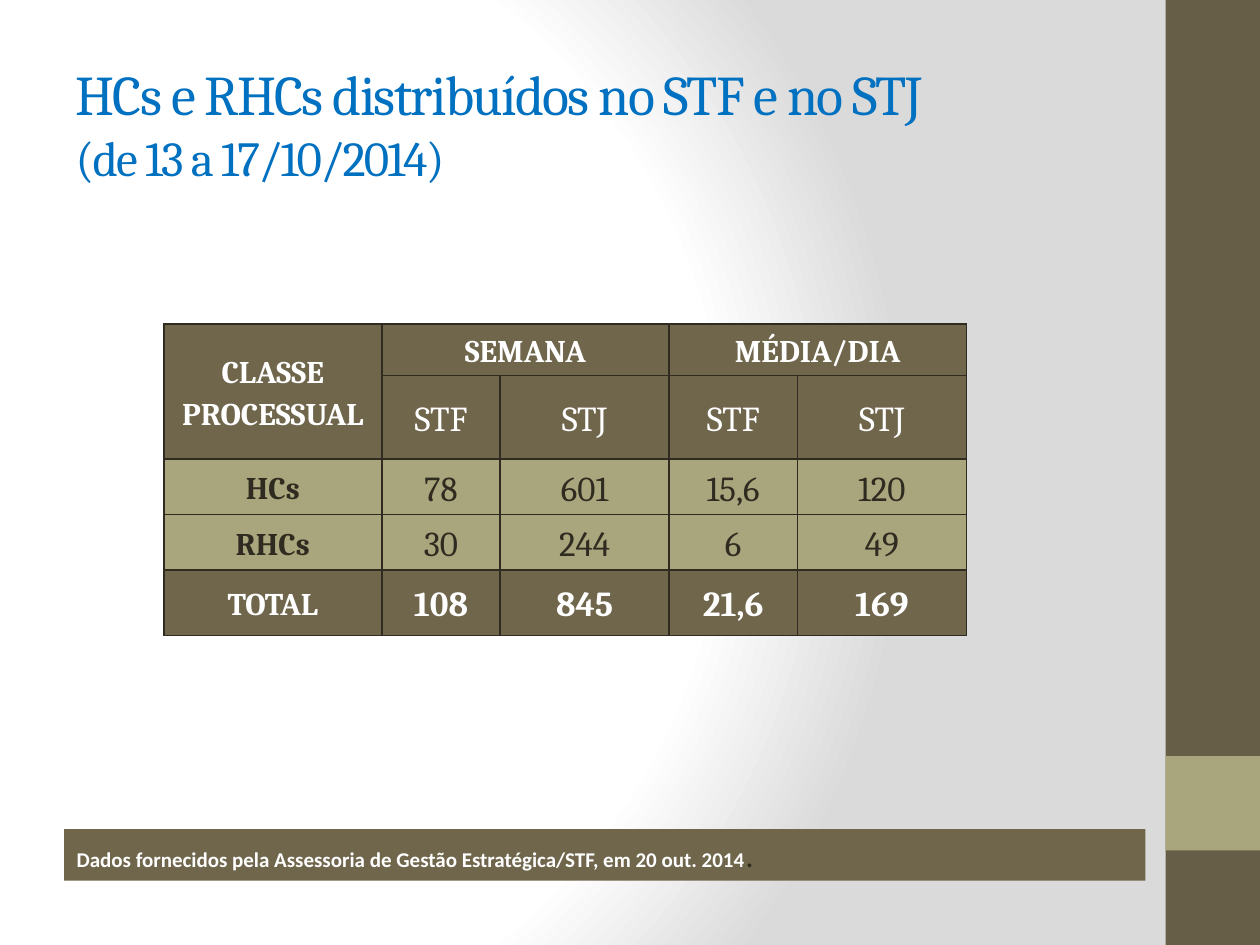
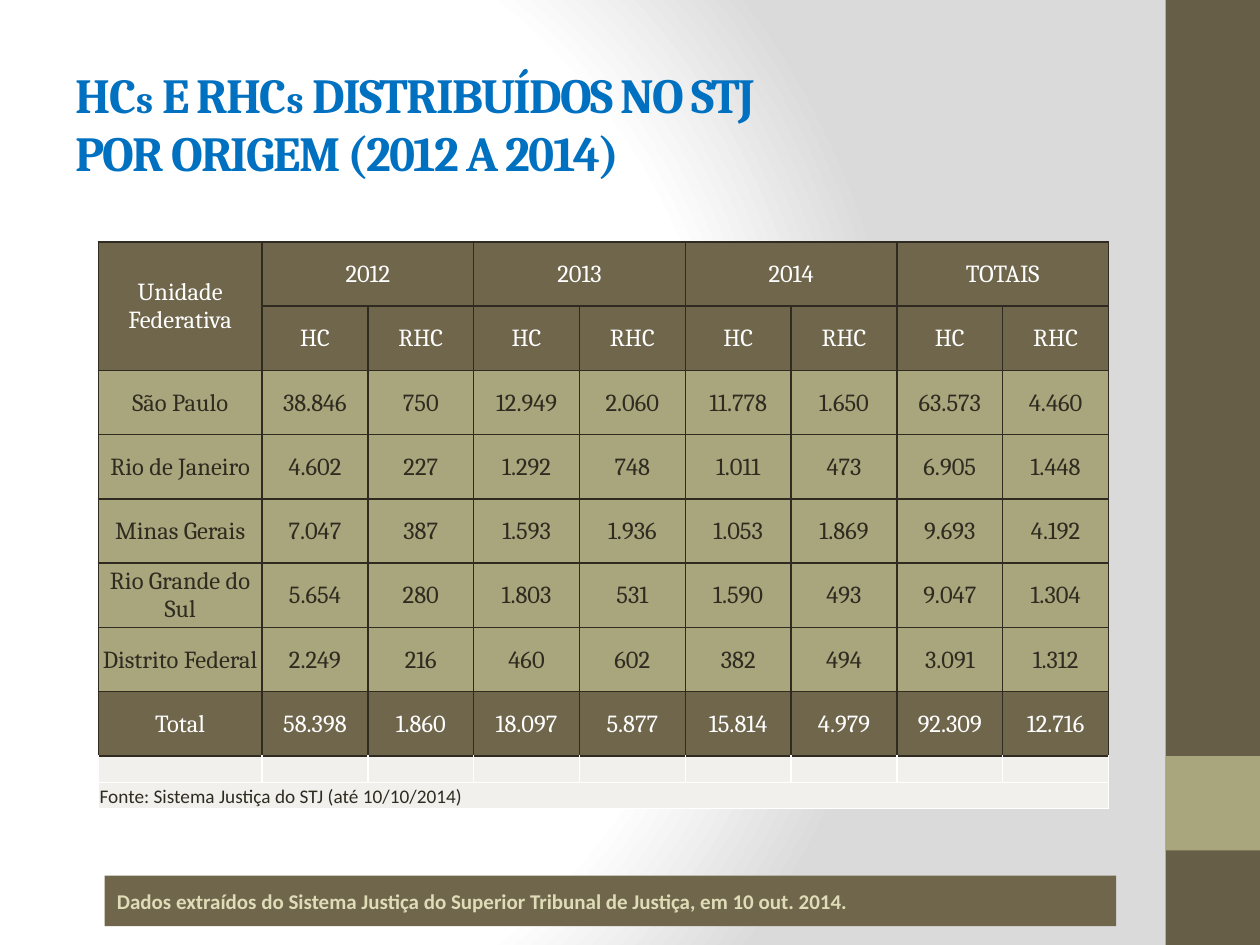
from lxml import etree
from pptx import Presentation
from pptx.dml.color import RGBColor
from pptx.enum.shapes import MSO_SHAPE
from pptx.enum.text import MSO_ANCHOR, MSO_AUTO_SIZE, PP_ALIGN
from pptx.oxml import parse_xml
from pptx.oxml.ns import qn
from pptx.util import Inches, Pt

# Shared look
BLUE = RGBColor(0x00, 0x70, 0xC0)
INK = RGBColor(0x2F, 0x2B, 0x20)
WHITE = RGBColor(0xFF, 0xFF, 0xFF)
BAND = RGBColor(0x67, 0x5E, 0x47)
DARK = RGBColor(0x6F, 0x66, 0x4C)
LIGHT = RGBColor(0xA9, 0xA5, 0x7C)
PALE = RGBColor(0xF1, 0xF0, 0xEC)
CREAM = RGBColor(0xDF, 0xDC, 0xB7)
SERIF, SANS = "Cambria", "Calibri"
TITLE_BOX = (0.5, 0.3, 8.33, 1.25)
BANDS = [((9.25, 0, 0.75, 7.5), BAND), ((9.25, 6, 0.75, 0.75), LIGHT)]
BACKGROUND = """
<p:bg xmlns:p="http://schemas.openxmlformats.org/presentationml/2006/main"
      xmlns:a="http://schemas.openxmlformats.org/drawingml/2006/main">
  <p:bgPr><a:gradFill rotWithShape="1">
    <a:gsLst>
      <a:gs pos="0"><a:srgbClr val="FFFFFF"/></a:gs>
      <a:gs pos="75000"><a:srgbClr val="FFFFFF"/></a:gs>
      <a:gs pos="100000"><a:srgbClr val="DADADA"/></a:gs>
    </a:gsLst>
    <a:path path="circle"><a:fillToRect l="20000" t="50000" r="100000" b="50000"/></a:path>
  </a:gradFill><a:effectLst/></p:bgPr>
</p:bg>"""

# Content: title lines and footers are runs of (text, size, ...)
WEEK = {
    "title": [[("HCs e RHCs distribuídos no STF e no STJ", 32)],
              [("(de 13 a 17/10/2014)", 28)]],
    "title_bold": False,
    "corner": "CLASSE PROCESSUAL",
    "groups": ["SEMANA", "MÉDIA/DIA"],
    "courts": ["STF", "STJ"],
    "rows": [
        ["HCs", "78", "601", "15,6", "120"],
        ["RHCs", "30", "244", "6", "49"],
        ["TOTAL", "108", "845", "21,6", "169"],
    ],
    "at": (1.3, 2.57),
    "widths": [1.73, 0.94, 1.34, 1.02, 1.34],
    "heights": [0.41, 0.66, 0.44, 0.44, 0.52],
    "margins": (0.07, 0, 0.07, 0),
    "line_spacing": 1.15,
    "label_size": 18, "value_size": 20, "bold_labels": True,
    "source": None,
    "footer": [("Dados fornecidos pela Assessoria de Gestão Estratégica/STF, "
                "em 20 out. 2014", 12, WHITE, True), (".", 18, INK, False)],
    "footer_box": (0.51, 6.58, 8.58, 0.41),
}
ORIGIN = {
    "title": [[("HC", 28), ("s", 22), (" E RHC", 28), ("s", 22),
               (" DISTRIBUÍDOS NO STJ", 28)],
              [("POR ORIGEM (2012 A 2014)", 28)]],
    "title_bold": True,
    "corner": "Unidade Federativa",
    "groups": ["2012", "2013", "2014", "TOTAIS"],
    "courts": ["HC", "RHC"],
    "rows": [
        ["São Paulo", "38.846", "750", "12.949", "2.060", "11.778", "1.650", "63.573", "4.460"],
        ["Rio de Janeiro", "4.602", "227", "1.292", "748", "1.011", "473", "6.905", "1.448"],
        ["Minas Gerais", "7.047", "387", "1.593", "1.936", "1.053", "1.869", "9.693", "4.192"],
        ["Rio Grande do Sul", "5.654", "280", "1.803", "531", "1.590", "493", "9.047", "1.304"],
        ["Distrito Federal", "2.249", "216", "460", "602", "382", "494", "3.091", "1.312"],
        ["Total", "58.398", "1.860", "18.097", "5.877", "15.814", "4.979", "92.309", "12.716"],
    ],
    "at": (0.78, 1.92),
    "widths": [1.3] + [0.84] * 8,
    "heights": [0.51] * 8 + [0.21] * 2,
    "margins": (0.01, 0.01, 0.01, 0),
    "line_spacing": 1.0,
    "label_size": 14, "value_size": 14, "bold_labels": False,
    "source": "Fonte: Sistema Justiça do STJ (até 10/10/2014)",
    "footer": [("Dados extraídos do Sistema Justiça do Superior Tribunal de Justiça, "
                "em 10 out. 2014.", 12, CREAM, True)],
    "footer_box": (0.83, 6.95, 8.03, 0.4),
}


def add_bar(slide, box, color):
    bar = slide.shapes.add_shape(MSO_SHAPE.RECTANGLE, *map(Inches, box))
    bar.shadow.inherit = False
    bar.fill.solid()
    bar.fill.fore_color.rgb = color
    bar.line.fill.background()
    return bar


def style(font, face, color, size=None, bold=False):
    font.name, font.bold = face, bold
    font.color.rgb = color
    if size:
        font.size = Pt(size)


def dress_master(master, slide):
    """Put the background and the side bands on the master, behind the rest."""
    page = master.element.cSld
    old = page.find(qn("p:bg"))
    if old is not None:
        page.remove(old)
    page.insert(0, parse_xml(BACKGROUND))
    for place, (box, color) in enumerate(BANDS, start=2):
        master.shapes.element.insert(place, add_bar(slide, box, color).element)


def add_title(slide, lines, bold):
    title = slide.shapes.title
    title.left, title.top, title.width, title.height = map(Inches, TITLE_BOX)
    frame = title.text_frame
    frame.auto_size = MSO_AUTO_SIZE.NONE
    frame.vertical_anchor = MSO_ANCHOR.MIDDLE
    frame.margin_top = Inches(0.15)
    heading = frame.paragraphs[0]
    heading.alignment = PP_ALIGN.LEFT
    style(heading.font, SERIF, BLUE, bold=bold)
    for number, line in enumerate(lines):
        if number:
            heading.add_line_break()
        for text, size in line:
            run = heading.add_run()
            run.text = text
            run.font.size = Pt(size)
            run._r.get_or_add_rPr().set("spc", "-100")


def set_borders(cell, color, top=None):
    properties = cell._tc.get_or_add_tcPr()
    sides = [("a:lnL", color), ("a:lnR", color), ("a:lnT", top or color), ("a:lnB", color)]
    for place, (side, shade) in enumerate(sides):
        line = etree.Element(qn(side), w=str(Pt(1)))
        fill = etree.SubElement(line, qn("a:solidFill"))
        etree.SubElement(fill, qn("a:srgbClr"), val=str(shade))
        properties.insert(place, line)


def fill_cell(cell, text, fill, margins, border=INK, top=None):
    cell.fill.solid()
    cell.fill.fore_color.rgb = fill
    cell.margin_left, cell.margin_top, cell.margin_right, cell.margin_bottom = map(Inches, margins)
    cell.vertical_anchor = MSO_ANCHOR.MIDDLE
    set_borders(cell, border, top)
    cell.text = text
    return cell.text_frame.paragraphs[0]


def add_source_rows(table, row, text, margins):
    """Close the table with an empty row and a merged source row."""
    for col in range(len(table.columns)):
        gap = fill_cell(table.cell(row, col), "", PALE, margins, WHITE, INK)
        gap._p.get_or_add_endParaRPr().set("sz", "1100")
        fill_cell(table.cell(row + 1, col), "", PALE, margins, WHITE)
    source = table.cell(row + 1, 0)
    source.merge(table.cell(row + 1, len(table.columns) - 1))
    source.vertical_anchor = MSO_ANCHOR.BOTTOM
    source.text = text
    style(source.text_frame.paragraphs[0].font, SANS, INK, 11)


def add_counts(slide, content):
    widths, heights, margins = content["widths"], content["heights"], content["margins"]
    table = slide.shapes.add_table(
        len(heights), len(widths), *map(Inches, (*content["at"], sum(widths), sum(heights)))).table
    table.first_row = table.horz_banding = False
    for column, width in zip(table.columns, widths):
        column.width = Inches(width)
    for row, height in zip(table.rows, heights):
        row.height = Inches(height)

    # Two header rows: each group spans its courts
    groups, courts = content["groups"], content["courts"]
    top_row = [content["corner"]]
    for group in groups:
        top_row += [group] + [""] * (len(courts) - 1)
    grid = [top_row, [""] + courts * len(groups)] + content["rows"]
    total = len(grid) - 1

    for r, texts in enumerate(grid):
        strong = r < 2 or r == total
        for c, text in enumerate(texts):
            label = r == 0 or c == 0
            entry = fill_cell(table.cell(r, c), text, DARK if strong else LIGHT, margins)
            entry.alignment = PP_ALIGN.CENTER
            entry.line_spacing = content["line_spacing"]
            style(entry.font, SERIF, WHITE if strong else INK,
                  content["label_size" if label else "value_size"],
                  content["bold_labels"] and (label or r == total))
    table.cell(0, 0).merge(table.cell(1, 0))
    for c in range(1, len(widths), len(courts)):
        table.cell(0, c).merge(table.cell(0, c + len(courts) - 1))
    if content["source"]:
        add_source_rows(table, len(grid), content["source"], margins)


def add_footer(slide, box, runs):
    frame = add_bar(slide, box, DARK).text_frame
    frame.word_wrap = True
    frame.vertical_anchor = MSO_ANCHOR.MIDDLE
    note = frame.paragraphs[0]
    note.alignment = PP_ALIGN.LEFT
    for text, size, color, bold in runs:
        run = note.add_run()
        run.text = text
        style(run.font, SANS, color, size, bold)


def main():
    deck = Presentation()
    deck.slide_width, deck.slide_height = Inches(10), Inches(7.5)
    title_only = deck.slide_layouts[5]
    for number, content in enumerate([WEEK, ORIGIN]):
        slide = deck.slides.add_slide(title_only)
        if number == 0:
            dress_master(deck.slide_master, slide)
        add_title(slide, content["title"], content["title_bold"])
        add_counts(slide, content)
        add_footer(slide, content["footer_box"], content["footer"])
    deck.save("out.pptx")


if __name__ == "__main__":
    main()
